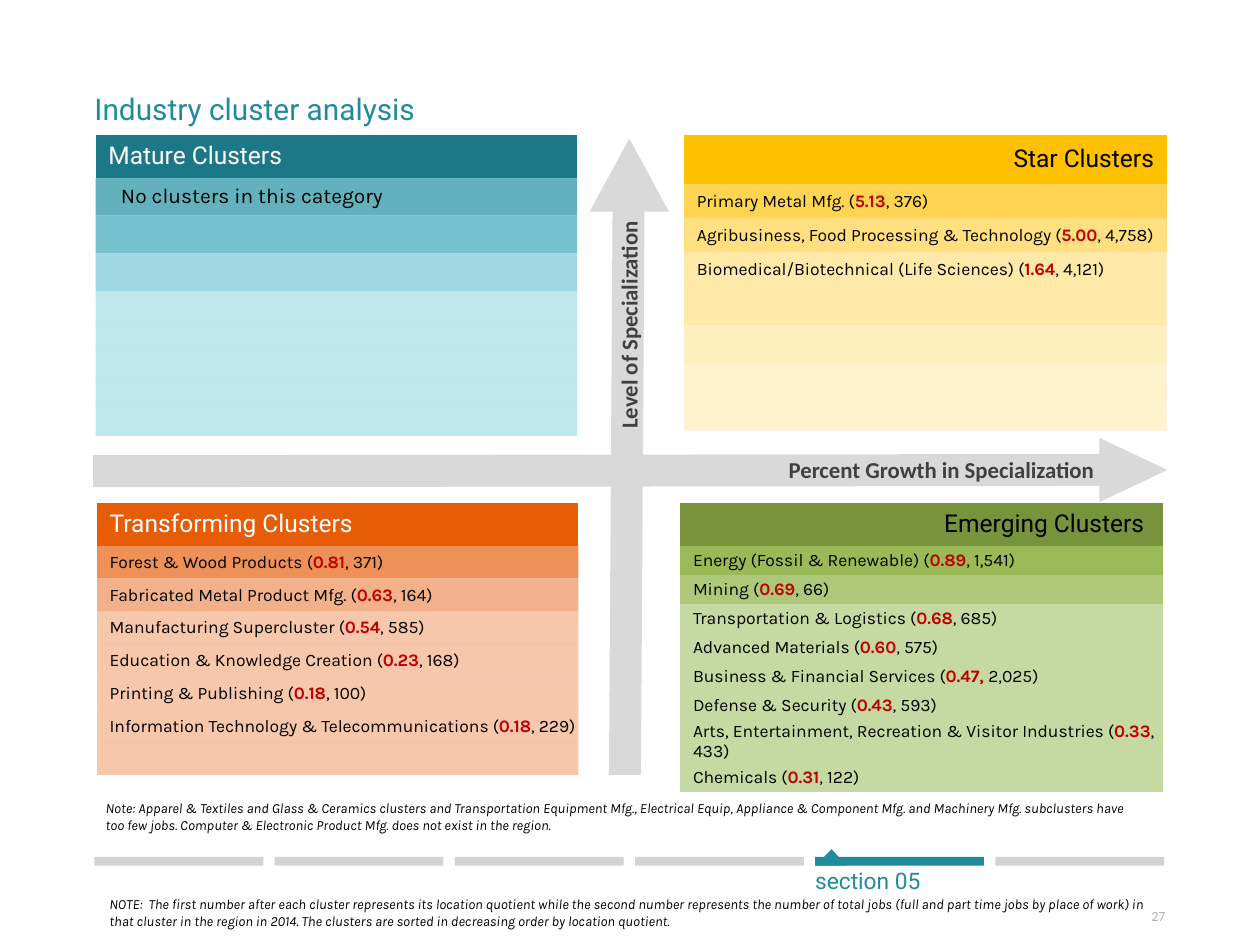
import pptx
import pptx.util
import pptx.dml.color
import pptx.enum.shapes
import pptx.enum.text
import pptx.oxml.ns
import lxml.etree

UNIT = 0.1  # inches per grid step: 100 columns by 75 rows
TEAL, GREY, PALE, BLACK, WHITE, RED = (
    "208B9C", "D1D3D4", "D9D9D9", "000000", "FFFFFF", "C00000")
PLAIN = "{2D5ABB26-0587-4C30-8999-92F81FD0307C}"  # table style without grid
SHAPE = pptx.enum.shapes.MSO_SHAPE
ALIGN = pptx.enum.text.PP_ALIGN
ANCHOR = pptx.enum.text.MSO_ANCHOR


def grid(*steps):
    return [pptx.util.Inches(step * UNIT) for step in steps]


def tint(color):
    return pptx.dml.color.RGBColor.from_string(color)


def sub(node, tag, **attrs):
    return lxml.etree.SubElement(node, pptx.oxml.ns.qn(tag), attrs)


class Page:
    def __init__(self, deck):
        self.slide = deck.slides.add_slide(deck.slide_layouts[6])
        self.shapes = self.slide.shapes

    def paint(self, fill, color, alpha=100):
        fill.solid()
        fill.fore_color.rgb = tint(color)
        if alpha < 100:
            node = fill._xPr.find(".//" + pptx.oxml.ns.qn("a:srgbClr"))
            sub(node, "a:alpha", val=str(alpha * 1000))

    def style(self, para, size, face, color, bold=False, slant=False):
        font = para.font
        font.size, font.name = pptx.util.Pt(size), face
        font.bold, font.italic = bold, slant
        font.color.rgb = tint(color)

    def text(self, box, words, size, face, color, bold=False, slant=False,
             align=ALIGN.LEFT, anchor=ANCHOR.TOP, inset=True, turn=0, lead=None):
        shape = self.shapes.add_textbox(*grid(*box))
        shape.rotation = turn
        frame = shape.text_frame
        frame.word_wrap = True
        frame.vertical_anchor = anchor
        if not inset:
            frame.margin_left = frame.margin_right = 0
            frame.margin_top = frame.margin_bottom = 0
        para = frame.paragraphs[0]
        para.text, para.alignment = words, align
        if lead:
            para.line_spacing = lead
        self.style(para, size, face, color, bold, slant)

    def finish(self, shape, color):
        self.paint(shape.fill, color)
        shape.line.fill.background()
        shape.shadow.inherit = False

    def block(self, kind, box, color, turn=0):
        shape = self.shapes.add_shape(kind, *grid(*box))
        shape.rotation = turn
        self.finish(shape, color)

    def outline(self, points, color):
        start, *rest = [grid(*point) for point in points]
        build = self.shapes.build_freeform(*start)
        build.add_line_segments(rest)
        self.finish(build.convert_to_shape(), color)

    def line(self, start, end, color, width):
        kind = pptx.enum.shapes.MSO_CONNECTOR.STRAIGHT
        rule = self.shapes.add_connector(kind, *grid(*start, *end))
        rule.line.color.rgb = tint(color)
        rule.line.width = pptx.util.Pt(width)
        sub(rule._element.spPr, "a:effectLst")

    def table(self, box, rows, ink, align=ALIGN.LEFT):
        """Each row is (height, fill, alpha, words); the first is the header."""
        height = sum(row[0] for row in rows)
        table = self.shapes.add_table(len(rows), 1, *grid(*box, height)).table
        table.first_row = table.horz_banding = False
        table._tbl.tblPr.find(pptx.oxml.ns.qn("a:tableStyleId")).text = PLAIN
        for i, (tall, color, alpha, words) in enumerate(rows):
            table.rows[i].height = grid(tall)[0]
            cell = table.cell(i, 0)
            self.paint(cell.fill, color, alpha)
            cell.vertical_anchor = ANCHOR.MIDDLE
            para = cell.text_frame.paragraphs[0]
            if i == 0:
                para.text, para.alignment = words, align
                self.style(para, 14, "Roboto", ink)
                continue
            quote = "*" in words
            lone = words and not quote
            cell.margin_left, cell.margin_right, cell.margin_top, cell.margin_bottom = (
                grid(2, 1, 0.5, 0.5) if lone else grid(1, 0.1, 0.1, 0))
            self.style(para, 12 if lone else 10, "Karla", BLACK)
            # Words between stars are the location quotient
            for j, part in enumerate(words.split("*")):
                if part:
                    run = para.add_run()
                    run.text = part
                    if j == 1:
                        run.font.bold = True
                        run.font.color.rgb = tint(RED)


def main():
    deck = pptx.Presentation()
    deck.slide_width, deck.slide_height = grid(100, 75)
    page = Page(deck)

    # Title and page number
    page.text((7.5, 7.6, 85, 4.9), "Industry cluster analysis", 17, "Roboto",
              TEAL, inset=False, lead=0.85)
    page.text((89.3, 72.1, 3.2, 1.3), "27", 8, "Calibri", "B2B2B2",
              align=ALIGN.RIGHT, anchor=ANCHOR.BOTTOM, inset=False)

    # Section tracker: six bars, the fifth is current
    for i in range(6):
        page.block(SHAPE.RECTANGLE, (7.5 + 14.3 * i, 68, 13.4, 0.7),
                   TEAL if i == 4 else GREY)
    page.outline([(64.7, 68.7), (66, 67.4), (67.2, 68.7)], TEAL)
    page.text((64.7, 68.8, 13.4, 2.2), "section 05", 13, "Roboto", TEAL, inset=False)

    # Axes
    page.line((7.4, 37.4), (87.8, 37.3), PALE, 18.25)
    page.block(SHAPE.ISOSCELES_TRIANGLE, (87.4, 34.6, 5.1, 5.4), PALE, turn=90)
    page.text((45.9, 35.7, 42.3, 3.2), "Percent Growth in Specialization ", 13,
              "Calibri", "404040", bold=True, align=ALIGN.RIGHT)
    page.line((49.6, 61.5), (49.9, 14.5), PALE, 18.25)
    page.block(SHAPE.ISOSCELES_TRIANGLE, (46.8, 11, 6.3, 5.8), PALE)
    page.text((37.4, 24.2, 25, 3.2), "Level of Specialization", 13, "Calibri",
              "404040", bold=True, align=ALIGN.CENTER, turn=270)

    # Four quadrants
    page.table((7.6, 10.7, 38.2), [
        (3.4, "1C7786", 100, "Mature Clusters"),
        (3, "2290A2", 70, "No clusters in this category"),
        (3, "3CA8BA", 70, ""),
        (3, "76CAD8", 70, ""),
    ] + [(2.3, "A2DCE6", 70, "")] * 5, WHITE)

    page.table((54.3, 10.7, 38.3), [
        (3.9, "FFC000", 100, "Star Clusters"),
        (2.7, "FFD452", 100, "Primary Metal Mfg. (*5.13*, 376)"),
        (2.7, "FFDF7F", 100,
         "Agribusiness, Food Processing & Technology (*5.00*, 4,758)"),
        (2.8, "FFDF7F", 68,
         "Biomedical/Biotechnical (Life Sciences) (*1.64*, 4,121)"),
        (3, "FFDF7F", 68, ""),
        (3, "FFDF7F", 50, ""),
    ] + [(2.7, "FFC000", 20, "")] * 2, BLACK, ALIGN.RIGHT)

    page.table((54, 39.9, 38.3), [
        (3.4, "77933C", 100, "Emerging Clusters "),
        (2.3, "99BA56", 100, "Energy (Fossil & Renewable) (*0.89*, 1,541)"),
        (2.3, "AEC87A", 100, "Mining (*0.69*, 66)"),
    ] + [(2.3, "C7D9A3", 100, words) for words in (
        "Transportation & Logistics (*0.68*, 685)",
        "Advanced Materials (*0.60*, 575)",
        "Business & Financial Services (*0.47, *2,025)",
        "Defense & Security (*0.43*, 593)",
        "Arts, Entertainment, Recreation & Visitor Industries (*0.33*, 433)",
        "Chemicals (*0.31*, 122)")], BLACK, ALIGN.RIGHT)

    page.table((7.7, 39.9, 38.2), [
        (3.4, "E75C07", 100, "Transforming Clusters"),
        (2.6, "E75C07", 67, "Forest & Wood Products (*0.81*, 371)"),
        (2.6, "ED8C51", 67, "Fabricated Metal Product Mfg. (*0.63*, 164)"),
    ] + [(2.6, "E75C07", 34, words) for words in (
        "Manufacturing Supercluster (*0.54*, 585)",
        "Education & Knowledge Creation (*0.23*, 168)",
        "Printing & Publishing (*0.18*, 100)",
        "Information Technology & Telecommunications (*0.18*, 229)",
        "")], WHITE)

    # Notes under the quadrants
    for box, words in (
        ((7.4, 63, 84.6, 3.7),
         "Note: Apparel & Textiles and Glass & Ceramics clusters and Transportation "
         "Equipment Mfg., Electrical Equip, Appliance & Component Mfg. and Machinery "
         "Mfg. subclusters have too few jobs. Computer & Electronic Product Mfg. does "
         "not exist in the region."),
        ((7.7, 70.6, 84.3, 3.7),
         "NOTE:  The first number after each cluster represents its location quotient "
         "while the second number represents the number of total jobs (full and part "
         "time jobs by place of work) in that cluster in the region in 2014. The "
         "clusters are sorted in decreasing order by location quotient."),
    ):
        page.text(box, words, 8, "Karla", BLACK, slant=True)

    deck.save("out.pptx")


if __name__ == "__main__":
    main()
